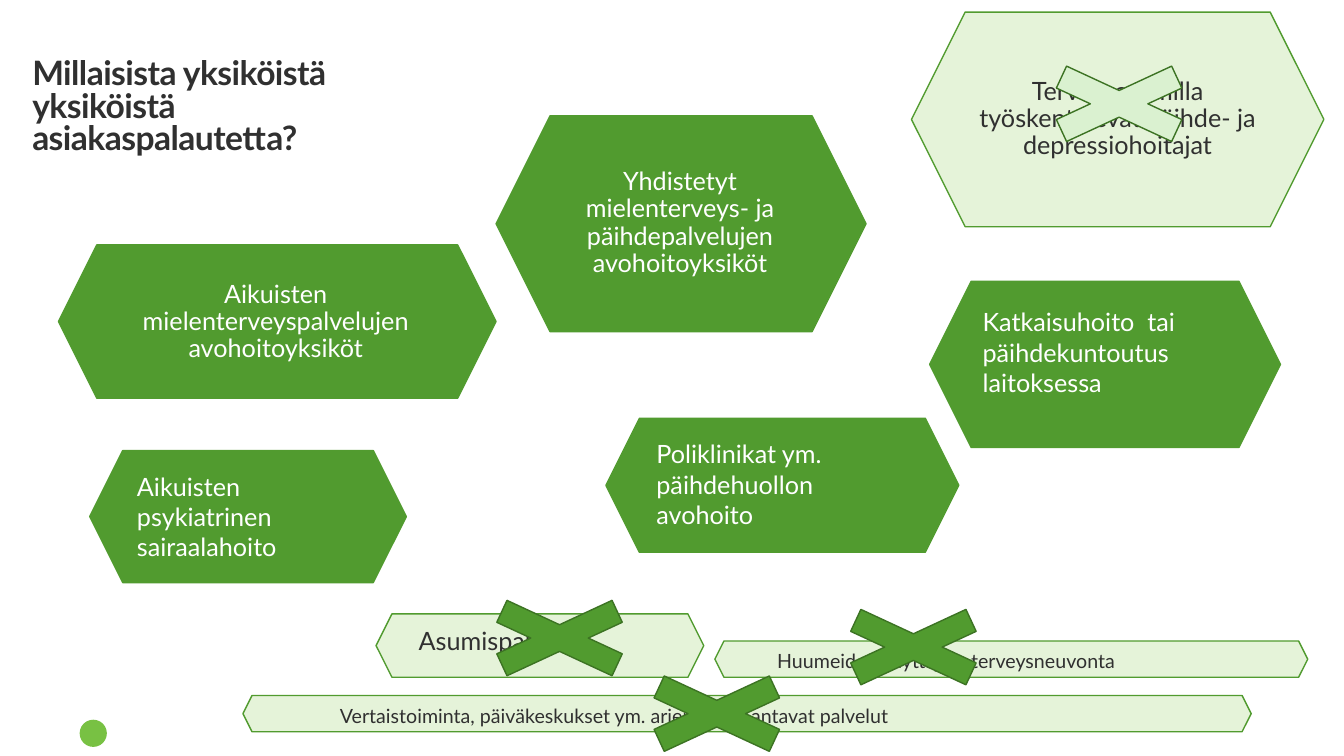
from dataclasses import dataclass

from pptx import Presentation
from pptx.dml.color import RGBColor
from pptx.enum.shapes import MSO_SHAPE
from pptx.enum.text import MSO_ANCHOR, MSO_AUTO_SIZE, PP_ALIGN
from pptx.util import Inches, Pt

HEXAGON, CROSS, OVAL = MSO_SHAPE.HEXAGON, MSO_SHAPE.MATH_MULTIPLY, MSO_SHAPE.OVAL
TOP, MIDDLE = MSO_ANCHOR.TOP, MSO_ANCHOR.MIDDLE
LEFT, CENTER = PP_ALIGN.LEFT, PP_ALIGN.CENTER
TITLE_ONLY = 5
INSETS = (0.1, 0.05, 0.1, 0.05)


@dataclass(frozen=True)
class Theme:
    font: str = "Lato"
    green: str = "519B2F"
    pale: str = "E5F3D9"
    mint: str = "DAF1D0"
    edge: str = "3C7323"
    logo: str = "78C143"
    dark: str = "303030"
    white: str = "FFFFFF"
    head: int = 24
    body: int = 18
    small: int = 14


THEME = Theme()

# Units that are included: box, text
INCLUDED = [
    ((0.89, 4.47, 3.14, 1.31), "Aikuisten psykiatrinen sairaalahoito"),
    ((6.01, 4.15, 3.5, 1.33), "Poliklinikat ym. päihdehuollon avohoito"),
    ((9.22, 2.79, 3.48, 1.65), "Katkaisuhoito  tai päihdekuntoutus\nlaitoksessa"),
]

# Units that are crossed out: box, text, type size
EXCLUDED = [
    ((3.73, 6.09, 3.25, 0.63), "Asumispalvelut", THEME.body),
    ((7.09, 6.36, 5.88, 0.36), "Huumeiden käyttäjien terveysneuvonta", THEME.small),
    ((2.41, 6.9, 10, 0.36),
     "Vertaistoiminta, päiväkeskukset ym. arjen tukea antavat palvelut", THEME.small),
]

# Hexagons with a centred label: box, label box, text, fill, text colour
LABELLED = [
    ((4.92, 1.15, 3.67, 2.14), (5.48, 1.48, 2.53, 1.47),
     "Yhdistetyt mielenterveys- ja päihdepalvelujen avohoitoyksiköt",
     THEME.green, THEME.white),
    ((0.58, 2.43, 4.34, 1.52), (1.07, 2.67, 3.33, 1.05),
     "Aikuisten mielenterveyspalvelujen avohoitoyksiköt",
     THEME.green, THEME.white),
    ((9.04, 0.12, 4.09, 2.13), (9.67, 0.45, 2.83, 1.47),
     "Terveysasemilla työskentelevät päihde- ja depressiohoitajat",
     THEME.pale, THEME.dark),
]

# Crosses: left, top, fill
CROSSES = [
    (10, 0.52, THEME.mint),
    (6.01, 6.57, THEME.green),
    (7.96, 5.91, THEME.green),
    (4.45, 5.82, THEME.green),
]


def inches(box):
    return [Inches(value) for value in box]


def write(shape, text, *, size=THEME.body, color=THEME.dark, bold=False,
          align=LEFT, anchor=TOP, insets=INSETS, spacing=1.0, track=None):
    """Fill a shape with text; a newline starts a paragraph, \\v breaks a line."""
    frame = shape.text_frame
    frame.text = text
    frame.word_wrap = True
    frame.auto_size = MSO_AUTO_SIZE.NONE
    frame.vertical_anchor = anchor
    (frame.margin_left, frame.margin_top,
     frame.margin_right, frame.margin_bottom) = inches(insets)
    for para in frame.paragraphs:
        para.alignment = align
        para.line_spacing = spacing
        for run in para.runs:
            font = run.font
            font.name, font.size, font.bold = THEME.font, Pt(size), bold
            font.color.rgb = RGBColor.from_string(color)
            if track is not None:
                run._r.get_or_add_rPr().set("spc", str(track))


def draw(shapes, kind, box, fill, line=None):
    shape = shapes.add_shape(kind, *inches(box))
    shape.shadow.inherit = False
    shape.fill.solid()
    shape.fill.fore_color.rgb = RGBColor.from_string(fill)
    if line:
        shape.line.color.rgb = RGBColor.from_string(line)
        shape.line.width = Pt(1)
    else:
        shape.line.fill.background()
    return shape


def add_title(slide):
    title = slide.shapes.title
    title.left, title.top, title.width, title.height = inches((0.32, 0.45, 5.03, 1.25))
    write(title, "Millaisista yksiköistä\vyksiköistä\vasiakaspalautetta?",
          size=THEME.head, bold=True, anchor=MIDDLE,
          insets=(0, 0.04, 0.08, 0.04), spacing=0.8, track=-40)


def add_unit(slide, box, text, fill, color, size=THEME.body):
    unit = draw(slide.shapes, HEXAGON, box, fill, THEME.green)
    write(unit, text, size=size, color=color)


def add_labelled(slide, box, inner, text, fill, color):
    """Group a hexagon with a centred text box."""
    group = slide.shapes.add_group_shape()
    draw(group.shapes, HEXAGON, box, fill, THEME.green)
    label = group.shapes.add_textbox(*inches(inner))
    write(label, text, color=color, align=CENTER, anchor=MIDDLE,
          insets=(0, 0.01, 0, 0.01), spacing=0.9)


def main():
    deck = Presentation()
    deck.slide_width, deck.slide_height = Inches(13.33), Inches(7.5)
    slide = deck.slides.add_slide(deck.slide_layouts[TITLE_ONLY])
    add_title(slide)
    draw(slide.shapes, OVAL, (0.79, 7.14, 0.27, 0.27), THEME.logo)
    for item in LABELLED:
        add_labelled(slide, *item)
    for box, text in INCLUDED:
        add_unit(slide, box, text, THEME.green, THEME.white)
    for box, text, size in EXCLUDED:
        add_unit(slide, box, text, THEME.pale, THEME.dark, size)
    for left, top, fill in CROSSES:
        draw(slide.shapes, CROSS, (left, top, 2.2, 1.02), fill, THEME.edge)
    deck.save("out.pptx")


if __name__ == "__main__":
    main()
